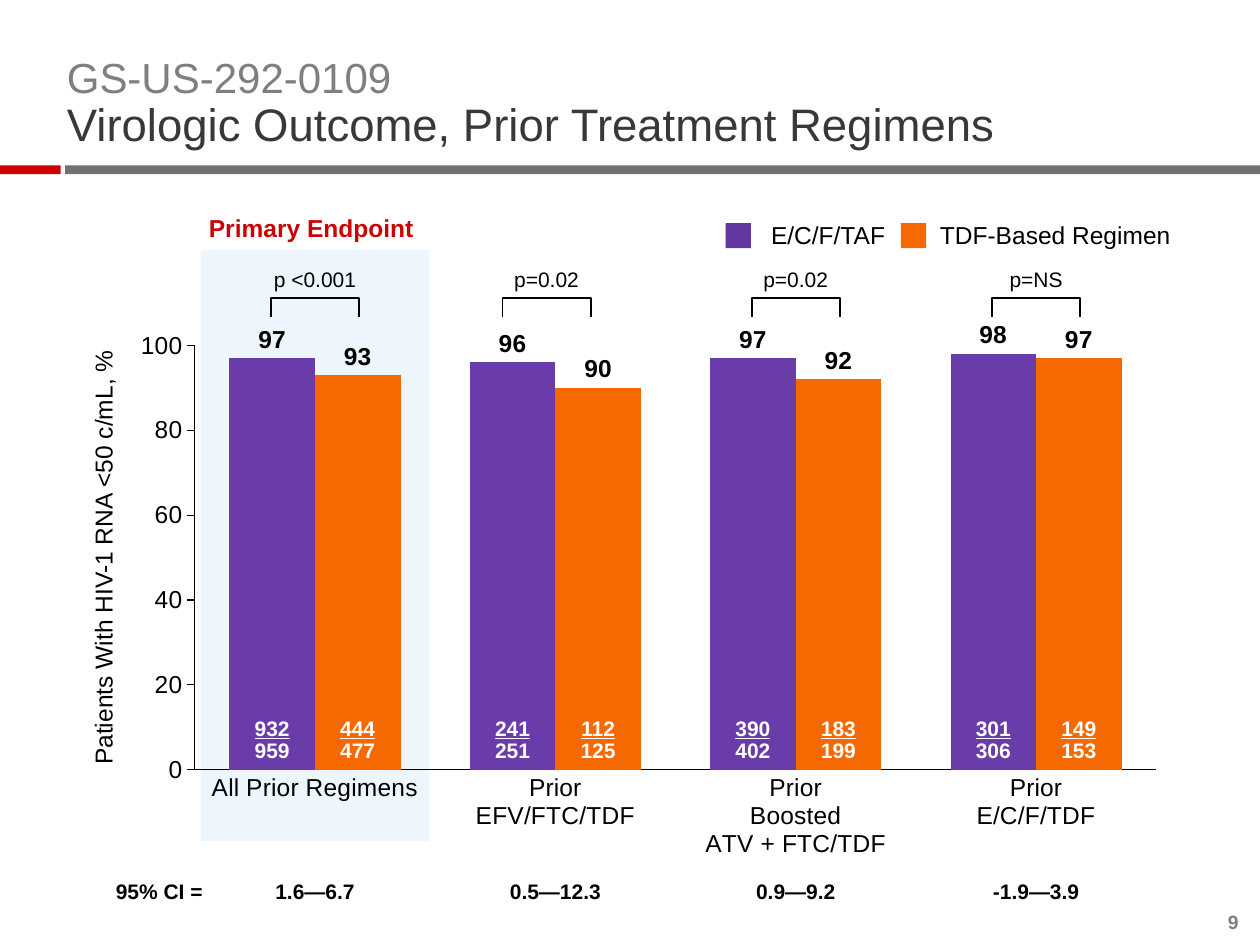
from dataclasses import dataclass

from lxml import etree
from pptx import Presentation
from pptx.chart.data import CategoryChartData
from pptx.dml.color import RGBColor
from pptx.enum.chart import XL_CHART_TYPE, XL_LABEL_POSITION, XL_TICK_MARK
from pptx.enum.shapes import MSO_SHAPE
from pptx.enum.text import MSO_ANCHOR, MSO_AUTO_SIZE, PP_ALIGN
from pptx.oxml import parse_xml
from pptx.oxml.ns import nsdecls, qn
from pptx.util import Pt

CLUSTERED = XL_CHART_TYPE.COLUMN_CLUSTERED
OUTSIDE_END = XL_LABEL_POSITION.OUTSIDE_END
TICK_NONE, TICK_OUT = XL_TICK_MARK.NONE, XL_TICK_MARK.OUTSIDE
RECTANGLE, BRACKET = MSO_SHAPE.RECTANGLE, MSO_SHAPE.LEFT_BRACKET
TOP, MIDDLE, BOTTOM = MSO_ANCHOR.TOP, MSO_ANCHOR.MIDDLE, MSO_ANCHOR.BOTTOM
LEFT, CENTER, RIGHT = PP_ALIGN.LEFT, PP_ALIGN.CENTER, PP_ALIGN.RIGHT
NO_AUTOFIT = MSO_AUTO_SIZE.NONE
TITLE_ONLY = 5


@dataclass(frozen=True)
class Theme:
    font: str = "Arial"
    black: str = "000000"
    white: str = "FFFFFF"
    red: str = "CC0000"
    rule: str = "717171"
    gray: str = "7F7F7F"
    dark: str = "383838"
    highlight: str = "DFEFFD"
    taf: str = "693CAA"
    taf_key: str = "6338A2"
    tdf: str = "F66900"
    title: int = 26
    study: int = 24
    body: int = 14
    small: int = 12
    number: int = 11


THEME = Theme()


@dataclass(frozen=True)
class Regimen:
    label: str
    rates: tuple
    fractions: tuple
    p_value: str
    interval: str
    bracket_shift: float = 0


REGIMENS = [
    Regimen("All Prior Regimens", (97, 93), (("932", "959"), ("444", "477")),
            "p <0.001", "1.6—6.7"),
    Regimen("Prior\nEFV/FTC/TDF", (96, 90), (("241", "251"), ("112", "125")),
            "p=0.02", "0.5—12.3", -5),
    Regimen("Prior\nBoosted\nATV + FTC/TDF", (97, 92), (("390", "402"), ("183", "199")),
            "p=0.02", "0.9—9.2"),
    Regimen("Prior\nE/C/F/TDF", (98, 97), (("301", "306"), ("149", "153")),
            "p=NS", "-1.9—3.9"),
]
FIRST_CENTER, PITCH = 180, 137.35
GAP_WIDTH = 81
BAR_WIDTH = PITCH / (2 + GAP_WIDTH / 100)
LABEL_WIDTH, LABEL_HEIGHT = 131, 21.6


def format_font(font, size, color=THEME.black, bold=False, underline=None):
    font.name = THEME.font
    font.size = Pt(size)
    font.bold = bold
    font.underline = underline
    font.color.rgb = RGBColor.from_string(color)


def add_span(para, text, **style):
    span = para.add_run()
    span.text = text
    format_font(span.font, **style)


class Page:
    """Holds the theme and the slide that elements are added to."""

    def __init__(self, slide, theme):
        self.slide = slide
        self.theme = theme

    def title(self, study, heading):
        box = self.slide.shapes.title
        box.left, box.top, box.width, box.height = Pt(38.2), Pt(33), Pt(681.8), Pt(53.5)
        frame = box.text_frame
        frame.auto_size = NO_AUTOFIT
        frame.vertical_anchor = BOTTOM
        frame.margin_left = frame.margin_right = frame.margin_top = frame.margin_bottom = 0
        para = frame.paragraphs[0]
        para.alignment = LEFT
        para.line_spacing = 0.9
        add_span(para, study, size=self.theme.study, color=self.theme.gray)
        para.add_line_break()
        add_span(para, heading, size=self.theme.title, color=self.theme.dark)

    def text(self, lines, left, top, width, height, align=LEFT, anchor=TOP, inset=True,
             spacing=1.0, rotation=0, underline_first=False, **style):
        box = self.slide.shapes.add_textbox(Pt(left), Pt(top), Pt(width), Pt(height))
        box.rotation = rotation
        frame = box.text_frame
        frame.word_wrap = True
        frame.vertical_anchor = anchor
        if not inset:
            frame.margin_left = frame.margin_right = frame.margin_top = frame.margin_bottom = 0
        for index, line in enumerate(lines):
            para = frame.add_paragraph() if index else frame.paragraphs[0]
            para.alignment = align
            para.line_spacing = spacing
            add_span(para, line, underline=underline_first and index == 0, **style)

    def rectangle(self, left, top, width, height, color, opacity=100):
        box = self.slide.shapes.add_shape(RECTANGLE, Pt(left), Pt(top), Pt(width), Pt(height))
        box.shadow.inherit = False
        box.line.fill.background()
        box.fill.solid()
        box.fill.fore_color.rgb = RGBColor.from_string(color)
        if opacity < 100:
            tint = box.fill._xPr.find(".//" + qn("a:srgbClr"))
            etree.SubElement(tint, qn("a:alpha"), val=str(opacity * 1000))

    def bracket(self, center, middle, span, depth):
        """Draw a square bracket that opens downward."""
        shape = self.slide.shapes.add_shape(
            BRACKET, Pt(center - depth / 2), Pt(middle - span / 2), Pt(depth), Pt(span))
        shape.rotation = 90
        shape.adjustments[0] = 0
        shape.shadow.inherit = False
        shape.fill.background()
        shape.line.color.rgb = RGBColor.from_string(self.theme.black)
        shape.line.width = Pt(1)

    def chart(self, left, top, width, height, series):
        data = CategoryChartData(number_format="0")
        data.categories = [regimen.label for regimen in REGIMENS]
        for index, (name, _) in enumerate(series):
            data.add_series(name, [regimen.rates[index] for regimen in REGIMENS])
        chart = self.slide.shapes.add_chart(
            CLUSTERED, Pt(left), Pt(top), Pt(width), Pt(height), data).chart
        chart.has_title = chart.has_legend = False
        format_font(chart.font, self.theme.body)
        plot = chart.plots[0]
        plot.gap_width, plot.overlap, plot.vary_by_categories = GAP_WIDTH, 0, False
        for bars, (_, color) in zip(plot.series, series):
            bars.format.fill.solid()
            bars.format.fill.fore_color.rgb = RGBColor.from_string(color)
            labels = bars.data_labels
            labels.show_value = True
            labels.number_format, labels.number_format_is_linked = "0", False
            labels.position = OUTSIDE_END
            format_font(labels.font, self.theme.body, bold=True)
        for axis, tick in ((chart.category_axis, TICK_NONE), (chart.value_axis, TICK_OUT)):
            axis.major_tick_mark, axis.minor_tick_mark = tick, TICK_NONE
            axis.has_major_gridlines = False
            axis.format.line.color.rgb = RGBColor.from_string(self.theme.black)
            axis.format.line.width = Pt(0.75)
            format_font(axis.tick_labels.font, self.theme.body)
        scale = chart.value_axis
        scale.minimum_scale, scale.maximum_scale, scale.major_unit = 0, 100, 20
        scale.tick_labels.number_format, scale.tick_labels.number_format_is_linked = "0", False
        self.place_plot(chart, x=0.082, y=0.233, w=0.874, h=0.598)

    def place_plot(self, chart, **fractions):
        """Fix the inner plot area as fractions of the chart frame."""
        area = chart.plots[0]._element.getparent()
        for old in area.findall(qn("c:layout")):
            area.remove(old)
        sizes = "".join(f'<c:{key} val="{value}"/>' for key, value in fractions.items())
        area.insert(0, parse_xml(
            f'<c:layout {nsdecls("c")}><c:manualLayout><c:layoutTarget val="inner"/>'
            f'<c:xMode val="edge"/><c:yMode val="edge"/>{sizes}</c:manualLayout></c:layout>'))


def main():
    deck = Presentation()
    deck.slide_width, deck.slide_height = Pt(720), Pt(540)
    page = Page(deck.slides.add_slide(deck.slide_layouts[TITLE_ONLY]), THEME)

    page.rectangle(37.2, 94.5, 682.8, 5, THEME.rule)
    page.rectangle(0, 94.5, 34.7, 5, THEME.red)
    page.title("GS-US-292-0109", "Virologic Outcome, Prior Treatment Regimens")
    page.rectangle(114.7, 143, 130.5, 337.5, THEME.highlight, opacity=50)
    page.chart(59.8, 103, 628.6, 405.4,
               [("E/C/F/TAF", THEME.taf), ("TDF-Based Regimen", THEME.tdf)])
    page.text(["Patients With HIV-1 RNA <50 c/mL, %"], -75.6, 310, 269.3, 17.3,
              align=CENTER, inset=False, rotation=270, size=THEME.body)
    page.text(["Primary Endpoint"], 112.3, 118.3, 133, 24.2,
              size=THEME.body, color=THEME.red, bold=True)

    for index, regimen in enumerate(REGIMENS):
        center = FIRST_CENTER + index * PITCH
        label_left = center - LABEL_WIDTH / 2
        page.bracket(center + regimen.bracket_shift, 175.7, span=50.4, depth=10.8)
        page.text([regimen.p_value], label_left + regimen.bracket_shift, 148.5,
                  LABEL_WIDTH, LABEL_HEIGHT, align=CENTER, size=THEME.small)
        for side, fraction in enumerate(regimen.fractions):
            page.text(fraction, center + (side - 1) * BAR_WIDTH, 410.4, BAR_WIDTH, 26.6,
                      align=CENTER, inset=False, spacing=0.9, underline_first=True,
                      size=THEME.small, color=THEME.white, bold=True)
        page.text([regimen.interval], label_left, 498.2, LABEL_WIDTH, LABEL_HEIGHT,
                  align=CENTER, anchor=BOTTOM, size=THEME.small, bold=True)
    page.text(["95% CI ="], 25.5, 498.2, LABEL_WIDTH, LABEL_HEIGHT,
              align=CENTER, anchor=BOTTOM, size=THEME.small, bold=True)

    for name, color, key_left, text_left, width in (
            ("E/C/F/TAF", THEME.taf_key, 414.7, 440.6, 70),
            ("TDF-Based Regimen", THEME.tdf, 514.8, 537.1, 137)):
        page.rectangle(key_left, 127.5, 14.4, 14.4, color)
        page.text([name], text_left, 120.2, width, 29.5, anchor=MIDDLE, inset=False,
                  spacing=0.9, size=THEME.body)
    page.text(["9"], 688.3, 520.5, 19.5, 13, align=RIGHT, anchor=BOTTOM, inset=False,
              size=THEME.number, color=THEME.gray, bold=True)
    deck.save("out.pptx")


if __name__ == "__main__":
    main()
